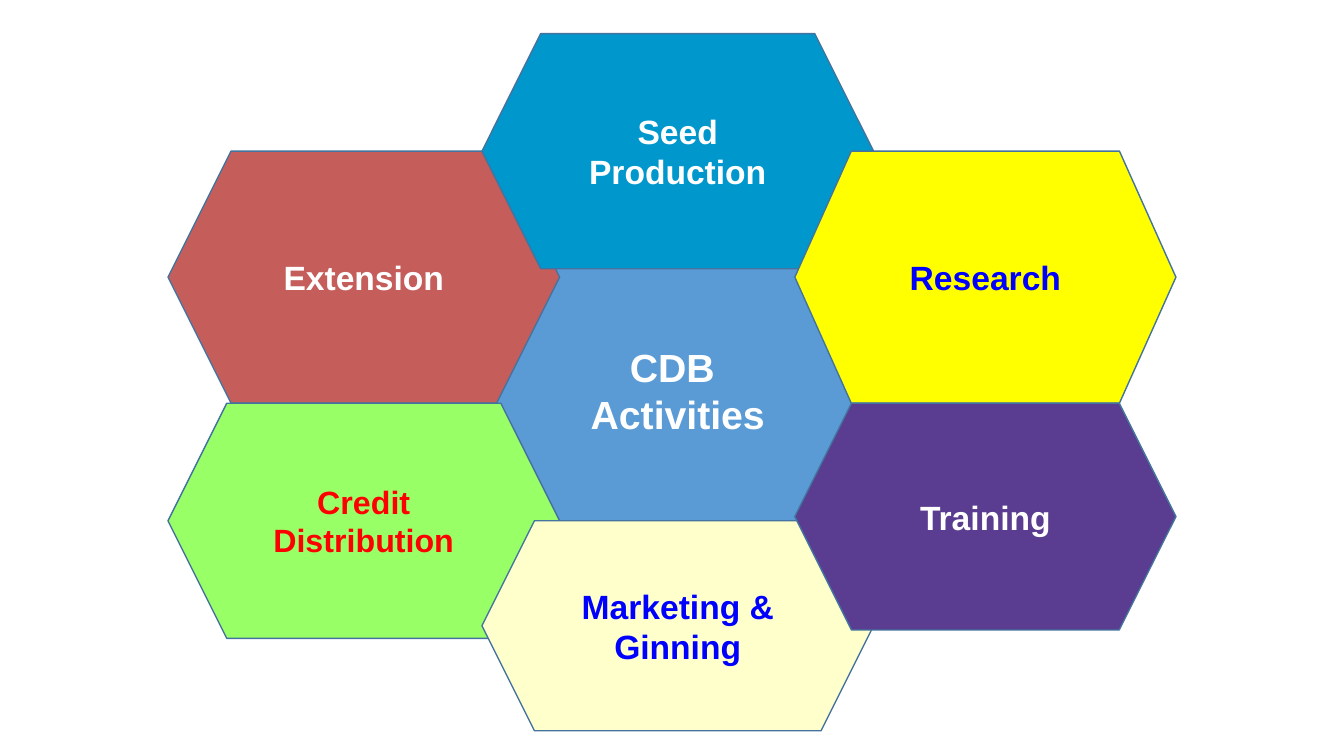
"""Build the CDB activities slide: a honeycomb of six activities around a hub."""
import pptx
import pptx.util
import pptx.dml.color
import pptx.enum.shapes
import pptx.enum.text

PX = 9525
COLORS = {
    "outline": "43739E", "hub": "5B9BD5", "brick": "C55E5B", "ocean": "0097CC",
    "yellow": "FFFF00", "green": "99FF66", "cream": "FFFFCC", "purple": "5A3C90",
    "white": "FFFFFF", "blue": "0000FF", "red": "FF0000",
}
LEFT, MIDDLE, RIGHT = (160, 373), (459, 373), (757, 363)


def color(name):
    return pptx.dml.color.RGBColor.from_string(COLORS[name])


def add_hexagon(group, text, *, column, top, height, fill, ink="white", size=24, slant=0.25):
    left, width = column
    box = group.shapes.add_shape(
        pptx.enum.shapes.MSO_SHAPE.HEXAGON, left * PX, top * PX, width * PX, height * PX)
    box.adjustments[0] = slant
    box.shadow.inherit = False
    box.fill.solid()
    box.fill.fore_color.rgb = color(fill)
    box.line.color.rgb = color("outline")
    box.line.width = pptx.util.Pt(1)
    frame = box.text_frame
    frame.word_wrap = True
    frame.vertical_anchor = pptx.enum.text.MSO_ANCHOR.MIDDLE
    frame.text = text
    for para in frame.paragraphs:
        para.alignment = pptx.enum.text.PP_ALIGN.CENTER
        for span in para.runs:
            span.font.name = "Arial"
            span.font.size = pptx.util.Pt(size)
            span.font.bold = True
            span.font.color.rgb = color(ink)


deck = pptx.Presentation()
deck.slide_width = 1280 * PX
deck.slide_height = 720 * PX
page = deck.slides.add_slide(deck.slide_layouts[6])
honeycomb = page.shapes.add_group_shape()

add_hexagon(honeycomb, "CDB \nActivities", column=(448, 395), top=248, height=248,
            fill="hub", size=28)
add_hexagon(honeycomb, "Extension", column=LEFT, top=144, height=240, fill="brick")
add_hexagon(honeycomb, "Seed\nProduction", column=MIDDLE, top=32, height=224, fill="ocean")
add_hexagon(honeycomb, "Research", column=RIGHT, top=144, height=240, fill="yellow",
            ink="blue", slant=0.224)
add_hexagon(honeycomb, "Credit\nDistribution", column=LEFT, top=384, height=224,
            fill="green", ink="red", size=23)
add_hexagon(honeycomb, "Marketing & Ginning", column=MIDDLE, top=496, height=200,
            fill="cream", ink="blue")
add_hexagon(honeycomb, "Training", column=RIGHT, top=384, height=216, fill="purple")

deck.save("out.pptx")
